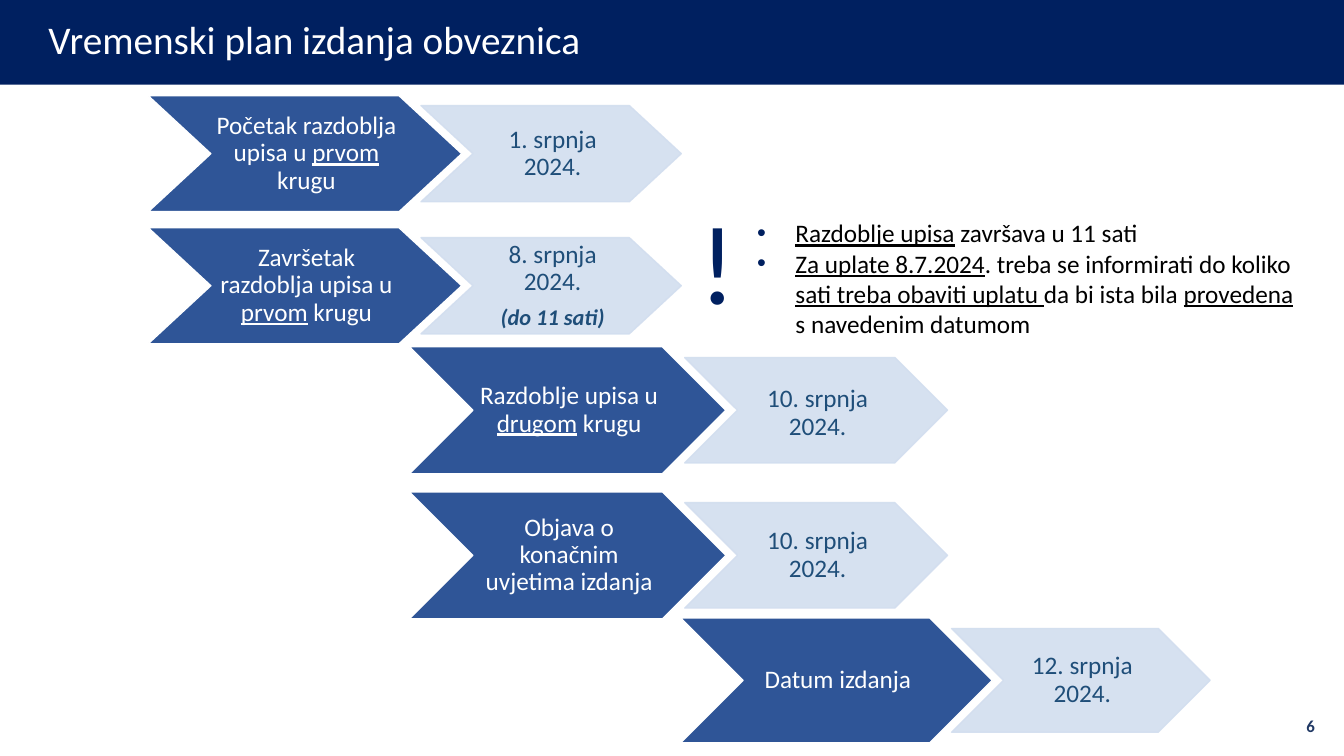
from dataclasses import dataclass

from lxml.etree import SubElement
from pptx import Presentation
from pptx.dml.color import RGBColor
from pptx.enum.shapes import MSO_SHAPE
from pptx.enum.text import MSO_ANCHOR, MSO_AUTO_SIZE, PP_ALIGN
from pptx.oxml.ns import qn
from pptx.util import Inches, Pt

NAVY = RGBColor(0x00, 0x20, 0x60)
BLUE = RGBColor(0x2F, 0x55, 0x97)
PALE = RGBColor(0xD2, 0xDE, 0xEF)
DATE = RGBColor(0x1F, 0x4E, 0x79)
NUMBER = RGBColor(0x20, 0x38, 0x64)
WHITE = RGBColor(0xFF, 0xFF, 0xFF)
BLACK = RGBColor(0x00, 0x00, 0x00)

DATE_SCALE = 0.83
DATE_OFFSET = 0.87


@dataclass
class Step:
    label: str
    date: str
    left: float
    top: float
    width: float
    height: float
    notch: float = 0.5
    note: str = ""
    drop: float = 0


STEPS = [
    Step("Početak razdoblja upisa u _prvom_ krugu", "1. srpnja 2024.",
         1.47, 0.95, 3.11, 1.15, notch=0.54),
    Step("Završetak razdoblja upisa u _prvom_ krugu", "8. srpnja 2024.",
         1.47, 2.26, 3.11, 1.15, notch=0.54, note="(do 11 sati)"),
    Step("Razdoblje upisa u _drugom_ krugu", "10. srpnja 2024.",
         4.06, 3.44, 3.14, 1.26, drop=0.06),
    Step("Objava o konačnim uvjetima izdanja", "10. srpnja 2024.",
         4.06, 4.88, 3.14, 1.26),
    Step("Datum izdanja", "12. srpnja 2024.", 6.75, 6.13, 3.09, 1.24),
]

REMINDERS = [
    "_Razdoblje upisa_ završava u 11 sati",
    "_Za uplate 8.7.2024_. treba se informirati do koliko "
    "_sati treba obaviti uplatu _da bi ista bila _provedena_ s navedenim datumom",
]


def write(p, text: str, size: float, color: RGBColor, **formats) -> None:
    for i, part in enumerate(text.split("_")):
        if not part:
            continue
        r = p.add_run()
        r.text = part
        r.font.color.rgb = color
        values = {"name": "Calibri", "size": Pt(size), "underline": i % 2 == 1, **formats}
        for name, value in values.items():
            setattr(r.font, name, value)


def place(sp, left: float, top: float, width: float, height: float) -> None:
    box = {"left": left, "top": top, "width": width, "height": height}
    for name, value in box.items():
        setattr(sp, name, Inches(value))


def set_frame(tf, anchor: MSO_ANCHOR, **margins: float) -> None:
    formats = {"word_wrap": True, "auto_size": MSO_AUTO_SIZE.NONE, "vertical_anchor": anchor}
    formats.update({f"margin_{side}": Inches(value) for side, value in margins.items()})
    for name, value in formats.items():
        setattr(tf, name, value)


def add_chevron(s, left: float, top: float, width: float, height: float, notch: float,
                fill: RGBColor, line: RGBColor):
    sp = s.shapes.add_shape(MSO_SHAPE.CHEVRON, Inches(left), Inches(top),
                            Inches(width), Inches(height))
    sp.adjustments[0] = notch
    sp.shadow.inherit = False
    sp.fill.solid()
    sp.fill.fore_color.rgb = fill
    sp.line.color.rgb = line
    sp.line.width = Pt(1)
    return sp


def add_step(s, step: Step) -> None:
    sp = add_chevron(s, step.left, step.top, step.width, step.height, step.notch, BLUE, WHITE)
    set_frame(sp.text_frame, MSO_ANCHOR.MIDDLE, left=0.03, right=0, top=0.01, bottom=0.01)
    p = sp.text_frame.paragraphs[0]
    p.alignment, p.line_spacing = PP_ALIGN.CENTER, 0.9
    write(p, step.label, 18, WHITE)

    height = step.height * DATE_SCALE
    sp = add_chevron(s, step.left + step.width * DATE_OFFSET,
                     step.top + (step.height - height) / 2,
                     step.width * DATE_SCALE, height, step.notch, PALE, PALE)
    for color in sp.element.spPr.iter(qn("a:srgbClr")):
        SubElement(color, qn("a:alpha"), val="90000")
    tf = sp.text_frame
    set_frame(tf, MSO_ANCHOR.MIDDLE, left=0.06, right=0.03, top=0.01 + step.drop, bottom=0.01)
    p = tf.paragraphs[0]
    p.alignment, p.line_spacing = PP_ALIGN.CENTER, 0.9
    write(p, step.date, 18, DATE)
    if step.note:
        p = tf.add_paragraph()
        p.alignment, p.line_spacing, p.space_before = PP_ALIGN.CENTER, 0.9, Pt(7)
        write(p, step.note, 16, DATE, bold=True, italic=True)


def add_label(s, text: str, left: float, top: float, width: float, height: float,
              align: PP_ALIGN, anchor: MSO_ANCHOR, size: float, color: RGBColor,
              bold: bool = False) -> None:
    sp = s.shapes.add_textbox(Inches(left), Inches(top), Inches(width), Inches(height))
    set_frame(sp.text_frame, anchor)
    p = sp.text_frame.paragraphs[0]
    p.alignment = align
    write(p, text, size, color, bold=bold)


def add_title(s, text: str, width: int) -> None:
    bar = s.shapes.add_shape(MSO_SHAPE.RECTANGLE, 0, 0, width, Inches(0.84))
    bar.shadow.inherit = False
    bar.fill.solid()
    bar.fill.fore_color.rgb = NAVY
    bar.line.fill.background()
    title = s.shapes.title
    title.element.addprevious(bar.element)
    place(title, 0.38, 0.06, 11.5, 0.71)
    set_frame(title.text_frame, MSO_ANCHOR.MIDDLE)
    p = title.text_frame.paragraphs[0]
    p.alignment, p.line_spacing = PP_ALIGN.LEFT, 0.9
    write(p, text, 28, WHITE)


def add_reminders(s, items: list[str]) -> None:
    body = s.placeholders[1]
    place(body, 7.41, 2.11, 5.64, 1.31)
    tf = body.text_frame
    set_frame(tf, MSO_ANCHOR.TOP)
    for i, item in enumerate(items):
        p = tf.add_paragraph() if i else tf.paragraphs[0]
        p.space_before = Pt(0)
        pPr = p._p.get_or_add_pPr()
        pPr.set("marL", str(Inches(0.38)))
        pPr.set("indent", str(-Inches(0.38)))
        SubElement(SubElement(pPr, qn("a:buClr")), qn("a:srgbClr"), val=str(NAVY))
        SubElement(pPr, qn("a:buFont"), typeface="Arial")
        SubElement(pPr, qn("a:buChar"), char="•")
        write(p, item, 18, BLACK)


def main() -> None:
    prs = Presentation()
    prs.slide_width, prs.slide_height = Inches(13.33), Inches(7.5)
    s = prs.slides.add_slide(prs.slide_layouts[1])
    add_title(s, "Vremenski plan izdanja obveznica", prs.slide_width)
    for step in STEPS:
        add_step(s, step)
    add_label(s, "!", 6.03, 1.86, 2.17, 1.45, PP_ALIGN.CENTER, MSO_ANCHOR.TOP, 80, NAVY)
    add_reminders(s, REMINDERS)
    add_label(s, "6", 12.7, 7, 0.44, 0.4, PP_ALIGN.RIGHT, MSO_ANCHOR.MIDDLE, 12, NUMBER, True)
    prs.save("out.pptx")


if __name__ == "__main__":
    main()
